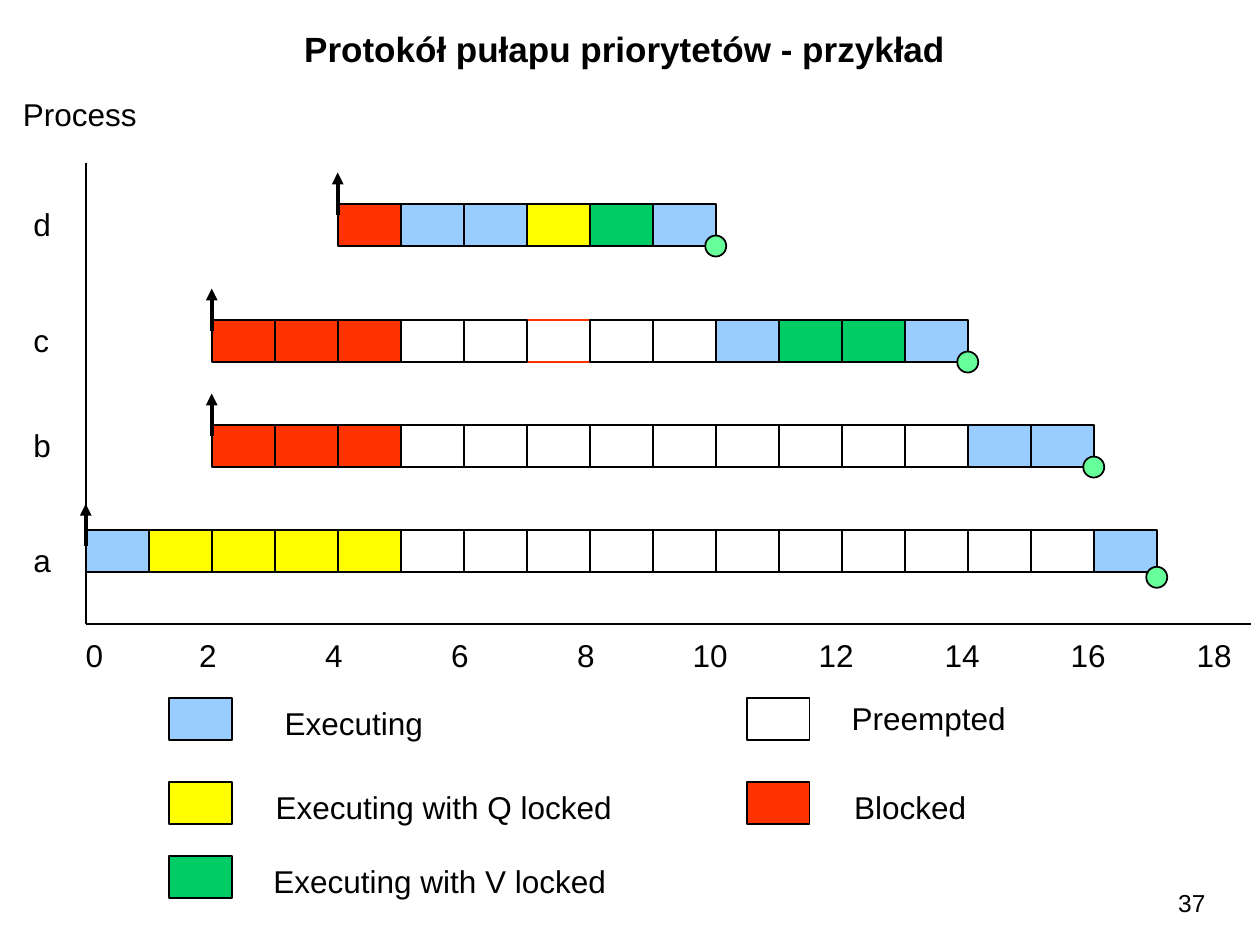
from dataclasses import dataclass

from lxml import etree
from pptx import Presentation
from pptx.dml.color import RGBColor
from pptx.enum.shapes import MSO_CONNECTOR, MSO_SHAPE
from pptx.enum.text import MSO_ANCHOR, MSO_AUTO_SIZE, PP_ALIGN
from pptx.oxml.ns import qn
from pptx.util import Pt

RECTANGLE, OVAL = MSO_SHAPE.RECTANGLE, MSO_SHAPE.OVAL
STRAIGHT = MSO_CONNECTOR.STRAIGHT
LEFT, CENTER, RIGHT = PP_ALIGN.LEFT, PP_ALIGN.CENTER, PP_ALIGN.RIGHT
TOP = MSO_ANCHOR.TOP
NO_FIT, GROW = MSO_AUTO_SIZE.NONE, MSO_AUTO_SIZE.SHAPE_TO_FIT_TEXT


@dataclass(frozen=True)
class Theme:
    font: str = "Arial"
    ink: str = "000000"
    executing: str = "99CCFF"
    q_locked: str = "FFFF00"
    v_locked: str = "00CC66"
    blocked: str = "FF3300"
    completed: str = "66FF99"
    title_size: float = 20
    label_size: float = 18
    number_size: float = 14
    line_width: float = 1
    arrow_width: float = 2.25


THEME = Theme()
AXIS_LEFT, AXIS_TOP, AXIS_BOTTOM, AXIS_RIGHT = 49, 93, 356.6, 715
UNIT, CELL_HEIGHT, DOT = 36, 24, 12
LABEL_HEIGHT = 28.8

# Cell codes: (fill, outline); R is a preempted cell with a red outline.
STATES = {
    "E": (THEME.executing, THEME.ink),
    "Q": (THEME.q_locked, THEME.ink),
    "V": (THEME.v_locked, THEME.ink),
    "B": (THEME.blocked, THEME.ink),
    "P": (None, THEME.ink),
    "R": (None, THEME.blocked),
}
# name, label top, row top, marker shift, release time, cell codes
PROCESSES = [
    ("d", 113.8, 116.6, 0, 4, "BEEQVE"),
    ("c", 179.8, 182.9, 0, 2, "BBBPPRPPEVVE"),
    ("b", 239.8, 242.9, 0, 2, "BBB" + "P" * 9 + "EE"),
    ("a", 305.5, 302.9, 3, 0, "EQQQQ" + "P" * 11 + "E"),
]
# code, box left, box top, text left, text top, text width, text
LEGEND = [
    ("E", 96.5, 399, 155.5, 399, 95, "Executing"),
    ("Q", 96.5, 447, 150.5, 446.6, 208, "Executing with Q locked"),
    ("V", 96.5, 489, 149.2, 488.9, 206, "Executing with V locked"),
    ("P", 426.7, 399, 479.5, 396, 106, "Preempted"),
    ("B", 426.7, 447, 481, 446.6, 80, "Blocked"),
]


class SlideBuilder:
    def __init__(self, slide, theme):
        self.slide = slide
        self.theme = theme

    def add_run(self, paragraph, text, size, bold=False):
        run = paragraph.add_run()
        run.text = text
        run.font.name = self.theme.font
        run.font.size = Pt(size)
        run.font.bold = bold
        run.font.color.rgb = RGBColor.from_string(self.theme.ink)

    def title(self, text, left, top, width, height):
        shape = self.slide.shapes.title
        shape.left, shape.top = Pt(left), Pt(top)
        shape.width, shape.height = Pt(width), Pt(height)
        frame = shape.text_frame
        frame.auto_size = NO_FIT
        frame.vertical_anchor = TOP
        paragraph = frame.paragraphs[0]
        paragraph.alignment = CENTER
        paragraph.space_before = Pt(0)
        self.add_run(paragraph, text, self.theme.title_size, bold=True)

    def label(self, text, left, top, width, height=LABEL_HEIGHT,
              alignment=LEFT, size=None, wrap=False):
        shape = self.slide.shapes.add_textbox(Pt(left), Pt(top), Pt(width), Pt(height))
        frame = shape.text_frame
        frame.word_wrap = wrap
        frame.auto_size = NO_FIT if wrap else GROW
        paragraph = frame.paragraphs[0]
        paragraph.alignment = alignment
        self.add_run(paragraph, text, size or self.theme.label_size)

    def box(self, kind, left, top, width, height, fill, outline):
        shape = self.slide.shapes.add_shape(kind, Pt(left), Pt(top), Pt(width), Pt(height))
        shape.shadow.inherit = False
        if fill is None:
            shape.fill.background()
        else:
            shape.fill.solid()
            shape.fill.fore_color.rgb = RGBColor.from_string(fill)
        shape.line.color.rgb = RGBColor.from_string(outline)
        shape.line.width = Pt(self.theme.line_width)

    def state_cell(self, code, left, top):
        self.box(RECTANGLE, left, top, UNIT, CELL_HEIGHT, *STATES[code])

    def line(self, start, end, width, arrow=False):
        """Draw a line between two points; arrow puts a triangle at the start."""
        connector = self.slide.shapes.add_connector(
            STRAIGHT, *(Pt(value) for value in (*start, *end)))
        connector.line.color.rgb = RGBColor.from_string(self.theme.ink)
        connector.line.width = Pt(width)
        if arrow:
            line_element = connector.line._get_or_add_ln()
            etree.SubElement(line_element, qn("a:headEnd"), type="triangle")
        etree.SubElement(connector._element.spPr, qn("a:effectLst"))

    def axes(self):
        origin = (AXIS_LEFT, AXIS_BOTTOM)
        self.line((AXIS_LEFT, AXIS_TOP), origin, self.theme.line_width)
        self.line(origin, (AXIS_RIGHT, AXIS_BOTTOM), self.theme.line_width)
        for time in range(0, 19, 2):
            width = 36 if time >= 10 else 24.5
            offset = 5 if time == 0 else -3.2 if time >= 10 else -2.2
            center = AXIS_LEFT + time * UNIT + offset
            self.label(str(time), center - width / 2, 359.8, width, alignment=CENTER)

    def process_row(self, name, label_top, top, marker_shift, release, codes):
        self.label(name, 12, label_top, 24.5)
        start = AXIS_LEFT + release * UNIT
        # The red outline goes behind its neighbours.
        for index, code in sorted(enumerate(codes), key=lambda cell: cell[1] != "R"):
            self.state_cell(code, start + index * UNIT, top)
        arrow_top = top - 18 + marker_shift
        self.line((start, arrow_top), (start, arrow_top + CELL_HEIGHT),
                  self.theme.arrow_width, arrow=True)
        end = start + len(codes) * UNIT
        self.box(OVAL, end - DOT / 2, top + CELL_HEIGHT + marker_shift - DOT / 2,
                 DOT, DOT, self.theme.completed, self.theme.ink)


def main():
    presentation = Presentation()
    presentation.slide_width, presentation.slide_height = Pt(720), Pt(540)
    slide = presentation.slides.add_slide(presentation.slide_layouts[5])
    builder = SlideBuilder(slide, THEME)
    builder.title("Protokół pułapu priorytetów - przykład", 18, 12.2, 678, 31)
    builder.label("Process", 6, 50.8, 80)
    builder.axes()
    for process in PROCESSES:
        builder.process_row(*process)
    for code, left, top, text_left, text_top, text_width, text in LEGEND:
        builder.state_cell(code, left, top)
        builder.label(text, text_left, text_top, text_width)
    builder.label("37", 630, 504, 66, 24, RIGHT, THEME.number_size, wrap=True)
    presentation.save("out.pptx")


if __name__ == "__main__":
    main()
